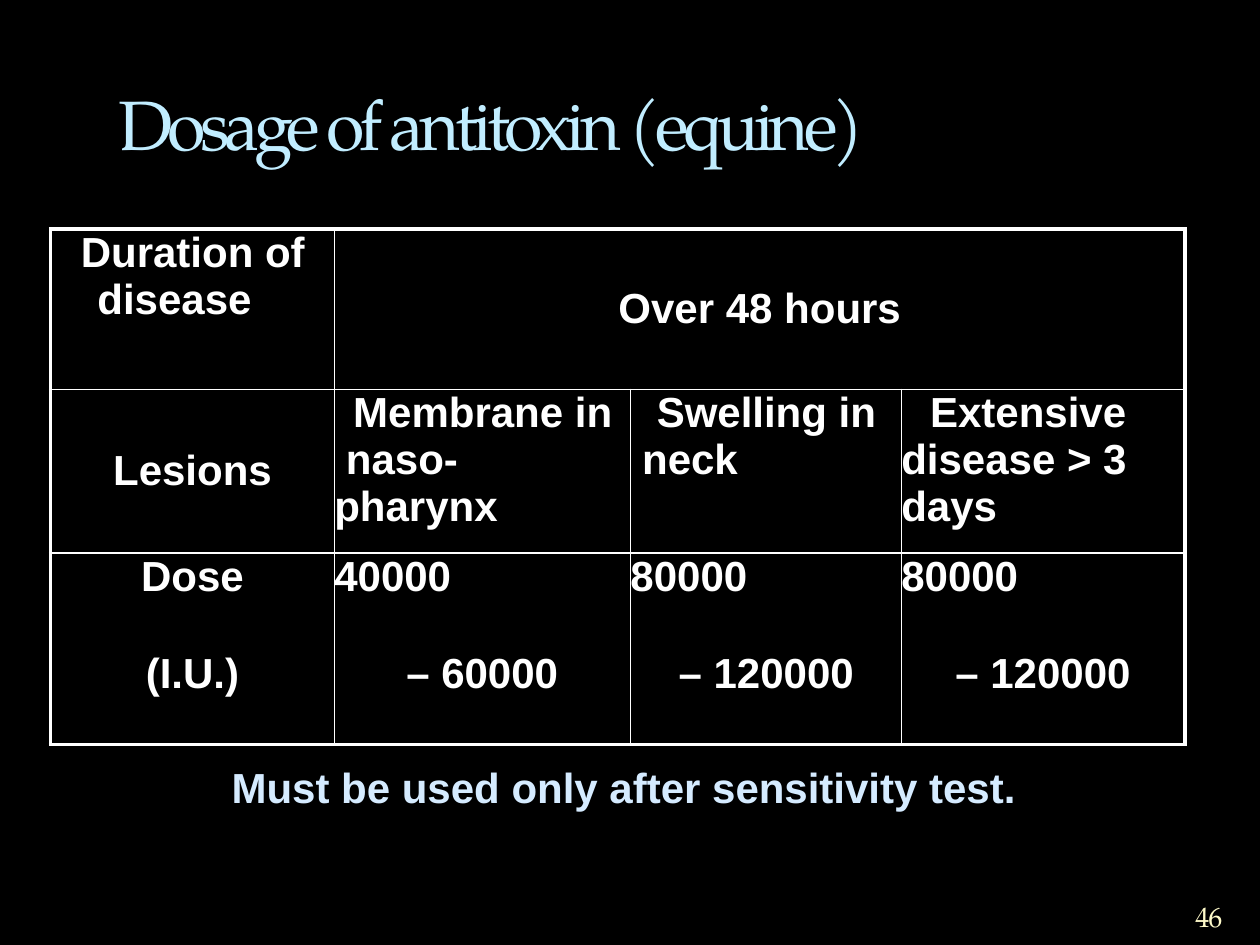
"""Build a slide with an antitoxin dosage table."""
from lxml.etree import SubElement
from pptx import Presentation
from pptx.dml.color import RGBColor
from pptx.enum.text import MSO_ANCHOR, MSO_AUTO_SIZE, PP_ALIGN
from pptx.oxml.ns import qn
from pptx.util import Cm, Pt

COLORS = {
    "background": "000000",
    "table": "FFFFFF",
    "title": "C1EDFF",
    "note": "D5EBFF",
    "number": "FEFAC9",
}
BODY, SERIF = "Arial", "TeX Gyre Pagella"
LEFT, CENTER = PP_ALIGN.LEFT, PP_ALIGN.CENTER
TOP, MIDDLE, BOTTOM = MSO_ANCHOR.TOP, MSO_ANCHOR.MIDDLE, MSO_ANCHOR.BOTTOM
COLUMNS = (5.72, 5.97, 5.46, 5.72)
ROWS = (3.23, 3.3, 1.96, 1.9)
CELLS = {
    (0, 0): ("Duration of\v disease", LEFT, TOP, 0.71, -0.1),
    (0, 1): ("Over 48 hours", CENTER, MIDDLE, 0, 0),
    (1, 0): ("Lesions", CENTER, MIDDLE, 0, 0),
    (1, 1): ("Membrane in\v naso-\vpharynx", LEFT, TOP, 0, 0.38),
    (1, 2): ("Swelling in\v neck", LEFT, TOP, 0, 0.53),
    (1, 3): ("Extensive\vdisease > 3\vdays", LEFT, TOP, 0, 0.58),
    (2, 0): ("Dose", CENTER, TOP, 0, 0),
    (2, 1): ("40000", LEFT, TOP, 0, 0),
    (2, 2): ("80000", LEFT, TOP, 0, 0),
    (2, 3): ("80000", LEFT, TOP, 0, 0),
    (3, 0): ("(I.U.)", CENTER, TOP, 0, 0),
    (3, 1): ("– 60000", LEFT, TOP, 0, 1.45),
    (3, 2): ("– 120000", LEFT, TOP, 0, 0.97),
    (3, 3): ("– 120000", LEFT, TOP, 0, 1.09),
}


class SlideBuilder:
    """Hold the style and the current slide."""

    def __init__(self, prs):
        self.slide = prs.slides.add_slide(prs.slide_layouts[5])
        fill = self.slide.background.fill
        fill.solid()
        fill.fore_color.rgb = self.color("background")

    def color(self, name):
        """Return a named colour."""
        return RGBColor.from_string(COLORS[name])

    def paragraph(self, tf, text, color, size=24, font=BODY, bold=True, align=LEFT, spacing=0):
        """Fill a text frame with one styled paragraph."""
        p = tf.paragraphs[0]
        p.text = text
        p.alignment = align
        for r in p.runs:
            r.font.size, r.font.name, r.font.bold = Pt(size), font, bold
            r.font.color.rgb = self.color(color)
            if spacing:
                r._r.get_or_add_rPr().set("spc", str(int(spacing * 100)))
        return p

    def title(self, text, left, top, width, height):
        """Place and format the title placeholder."""
        sp = self.slide.shapes.title
        sp.left, sp.top, sp.width, sp.height = map(Cm, (left, top, width, height))
        tf = sp.text_frame
        tf.auto_size, tf.vertical_anchor = MSO_AUTO_SIZE.NONE, BOTTOM
        self.paragraph(tf, text, "title", 40, SERIF, False, spacing=-3)

    def text(self, text, left, top, width, height, color, anchor=TOP, wrap=True, **style):
        """Add a text box without margins."""
        sp = self.slide.shapes.add_textbox(*map(Cm, (left, top, width, height)))
        tf = sp.text_frame
        tf.word_wrap, tf.vertical_anchor = wrap, anchor
        tf.margin_left = tf.margin_right = tf.margin_top = tf.margin_bottom = 0
        self.paragraph(tf, text, color, **style)

    def borders(self, cell, widths):
        """Draw the left, right, top and bottom cell borders."""
        tcPr = cell._tc.get_or_add_tcPr()
        for i, (side, width) in enumerate(zip("LRTB", widths)):
            ln = SubElement(tcPr, qn(f"a:ln{side}"), w=str(int(Pt(width))))
            if width:
                fill = SubElement(ln, qn("a:solidFill"))
                SubElement(fill, qn("a:srgbClr"), val=COLORS["table"])
            else:
                SubElement(ln, qn("a:noFill"))
            tcPr.insert(i, ln)

    def table(self, left, top, columns, rows, cells):
        """Add the dosage table with a merged heading and a heavy frame."""
        size = map(Cm, (left, top, sum(columns), sum(rows)))
        table = self.slide.shapes.add_table(len(rows), len(columns), *size).table
        table.first_row = table.horz_banding = False
        for column, width in zip(table.columns, columns):
            column.width = Cm(width)
        for row, height in zip(table.rows, rows):
            row.height = Cm(height)
        table.cell(0, 1).merge(table.cell(0, 3))
        for (i, j), (text, align, anchor, margin, indent) in cells.items():
            cell = table.cell(i, j)
            cell.margin_left = cell.margin_right = cell.margin_top = cell.margin_bottom = 0
            cell.vertical_anchor = anchor
            cell.fill.solid()
            cell.fill.fore_color.rgb = self.color("background")
            p = self.paragraph(cell.text_frame, text, "table", align=align)
            pPr = p._p.get_or_add_pPr()
            pPr.set("marL", str(int(Cm(margin))))
            pPr.set("indent", str(int(Cm(indent))))
            last_column = (i, j) == (0, 1) or j == len(columns) - 1
            self.borders(cell, (
                2.25 if j == 0 else 1,
                2.25 if last_column else 1,
                {0: 2.25, 3: 0}.get(i, 1),
                {2: 0, 3: 2.25}.get(i, 1),
            ))


def main():
    """Create and save the presentation."""
    prs = Presentation()
    prs.slide_width, prs.slide_height = Cm(25.4), Cm(19.05)
    s = SlideBuilder(prs)
    s.text("46", 24.08, 18.26, 0.58, 0.43, "number", MIDDLE, False,
           size=16, font=SERIF, bold=False, align=CENTER, spacing=-0.5)
    s.title("Dosage of antitoxin (equine)", 2.13, 1.7, 20.85, 1.75)
    s.table(1.02, 4.62, COLUMNS, ROWS, CELLS)
    s.text("Must be used only after sensitivity test.", 4.67, 15.36, 15.88, 0.97, "note")
    prs.save("out.pptx")


if __name__ == "__main__":
    main()
